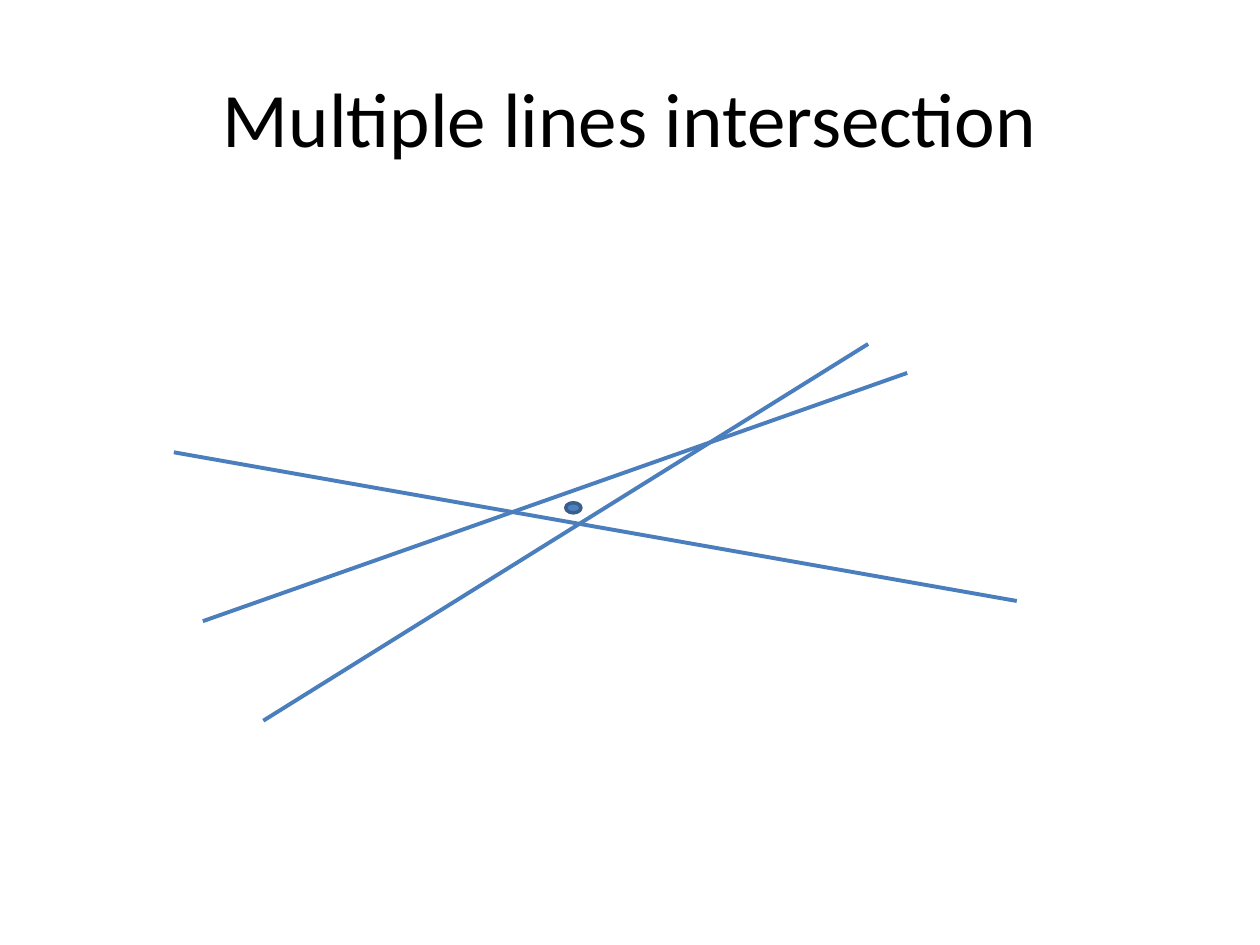
from pptx import Presentation
from pptx import util as u
from pptx.dml.color import RGBColor
from pptx.enum import shapes, text
from pptx.oxml.ns import qn
from lxml import etree


def colour(hex_string):
    return RGBColor.from_string(hex_string)


class SlideBuilder:
    font = "Calibri"
    title_size = 44
    title_colour = "000000"
    line_colour = "4B7EBC"
    line_width = 2.25
    point_fill = "4F81BD"
    point_outline = "3A5F8C"
    point_outline_width = 2

    def __init__(self, slide):
        self.slide = slide

    def title(self, wording, left, top, width, height):
        box = self.slide.shapes.add_textbox(
            *map(u.Inches, (left, top, width, height)))
        frame = box.text_frame
        frame.word_wrap = True
        frame.vertical_anchor = text.MSO_ANCHOR.MIDDLE
        heading = frame.paragraphs[0]
        heading.text = wording
        heading.alignment = text.PP_ALIGN.CENTER
        heading.font.name = self.font
        heading.font.size = u.Pt(self.title_size)
        heading.font.color.rgb = colour(self.title_colour)

    def line(self, start, end):
        connector = self.slide.shapes.add_connector(
            shapes.MSO_CONNECTOR.STRAIGHT, *map(u.Inches, (*start, *end)))
        connector.line.color.rgb = colour(self.line_colour)
        connector.line.width = u.Pt(self.line_width)
        etree.SubElement(connector._element.spPr, qn("a:effectLst"))

    def point(self, left, top, width, height):
        dot = self.slide.shapes.add_shape(
            shapes.MSO_SHAPE.OVAL, *map(u.Inches, (left, top, width, height)))
        dot.shadow.inherit = False
        dot.fill.solid()
        dot.fill.fore_color.rgb = colour(self.point_fill)
        dot.line.color.rgb = colour(self.point_outline)
        dot.line.width = u.Pt(self.point_outline_width)


def main():
    deck = Presentation()
    deck.slide_width = u.Inches(10)
    deck.slide_height = u.Inches(7.5)
    builder = SlideBuilder(deck.slides.add_slide(deck.slide_layouts[6]))

    # Heading
    builder.title("Multiple lines intersection", 0.5, 0.3, 9, 1.25)

    # Lines that nearly meet
    for start, end in (
        ((6.89, 2.73), (2.09, 5.72)),
        ((8.07, 4.77), (1.38, 3.59)),
        ((7.2, 2.96), (1.61, 4.93)),
    ):
        builder.line(start, end)

    # Estimated intersection point
    builder.point(4.49, 3.99, 0.12, 0.08)

    deck.save("out.pptx")


if __name__ == "__main__":
    main()
